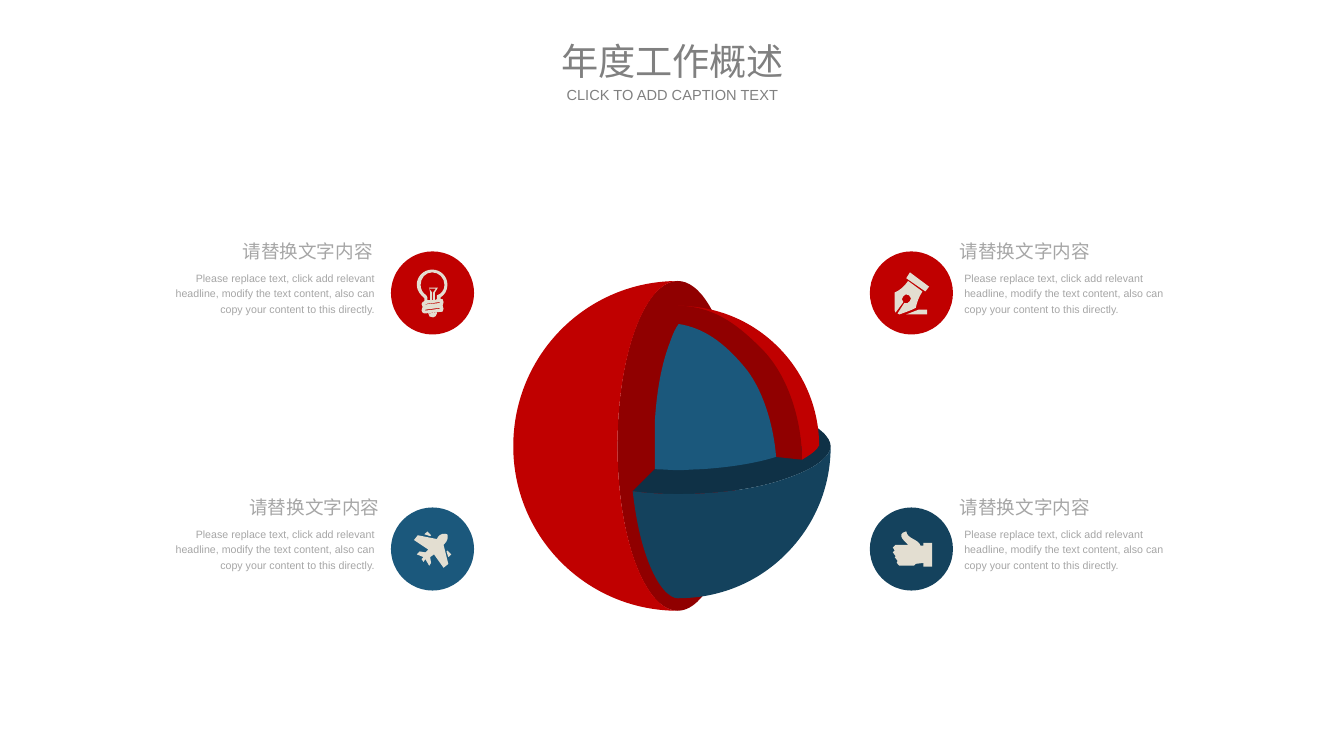
from pptx import Presentation
from pptx.dml.color import RGBColor
from pptx.enum.shapes import MSO_SHAPE as Preset
from pptx.enum.text import MSO_ANCHOR as Anchor, MSO_AUTO_SIZE as AutoSize, PP_ALIGN as Align
from pptx.oxml.ns import qn
from pptx.oxml.xmlchemy import OxmlElement
from pptx.util import Pt

COLORS = {
    "red": "C00000", "dark_red": "900000", "blue": "1B587C", "navy": "14425D",
    "dark_navy": "0F3146", "cream": "E3DED1", "title": "808080", "text": "A6A6A6",
}
FONT = "Arial"
TITLE = "年度工作概述"
CAPTION = "CLICK TO ADD CAPTION TEXT"
HEADING = "请替换文字内容"
BODY = ("Please replace text, click add relevant headline, modify the text content, "
        "also can copy your content to this directly.")

CUT_FACE = (465.1, 211.7, 90.7, 248.4)
SPHERE_PARTS = [
    ("red", [[
        (465.1, 336.2), (465.1, 267.1, 486, 211.7, 510.5, 211.7),
        (442.1, 211.7, 386.6, 267.1, 386.6, 336.2), (386.6, 404.6, 442.1, 460.1, 510.5, 460.1),
        (486, 460.1, 465.1, 404.6, 465.1, 336.2)]]),
    ("dark_navy", [[
        (595.4, 312.5), (581, 307.4, 563.8, 303.8, 545, 301.7), (476.6, 370.1),
        (487.4, 371.5, 499, 372.2, 510.5, 372.2), (542.9, 372.2, 573.1, 367.9, 595.4, 359.3),
        (617.8, 351.4, 625.7, 342, 625.7, 336.2), (625.7, 329.8, 617.8, 320.4, 595.4, 312.5)]]),
    ("navy", [[
        (625.7, 336.2), (625.7, 342, 617.8, 351.4, 595.4, 359.3),
        (573.1, 367.9, 542.9, 372.2, 510.5, 372.2), (499, 372.2, 487.4, 371.5, 476.6, 370.1),
        (478.8, 389.5, 482.4, 406.8, 487.4, 420.5), (495.4, 442.8, 504.7, 450.7, 510.5, 450.7),
        (541.4, 450.7, 570.2, 439.2, 591.8, 417.6), (614.2, 395.3, 625.7, 366.5, 625.7, 336.2)]]),
    ("red", [[
        (573.8, 265), (591.1, 287.3, 604.1, 317.5, 604.1, 346.3),
        (612.7, 341.3, 616.3, 337.7, 616.3, 336.2), (617, 336.2),
        (617, 307.4, 605.5, 280.8, 586.1, 261.4), (565.9, 241.2, 539.3, 230.4, 510.5, 230.4),
        (539.3, 230.4, 568.1, 257, 573.8, 265)]]),
    ("dark_red", [[
        (510.5, 230.4), (510.5, 336.2), (604.1, 346.3),
        (604.1, 317.5, 594, 283, 573.8, 262.8), (558, 247, 539.3, 230.4, 510.5, 230.4)]]),
    ("blue", [[
        (584.6, 344.2), (582.5, 318.2, 573.8, 291.6, 560.2, 275.8),
        (545, 257.8, 529.9, 247, 511.2, 244.1), (509, 247, 506.9, 251.3, 504.7, 257.8),
        (498.2, 274.3, 494.6, 295.2, 493.2, 318.2), (493.2, 353.5),
        (499, 353.5, 504.7, 354.2, 511.2, 354.2), (517, 354.2, 522.7, 353.5, 528.5, 353.5),
        (549.4, 352.1, 568.8, 349.2, 584.6, 344.2)]]),
]

THUMB = [[
    (27.4, 18), (18, 20.2, 28.8, 27.4, 28.8, 28.1), (19.4, 28.1), (17.3, 30.2),
    (18.7, 32.4), (17.3, 33.8), (19.4, 36.7), (18.7, 37.4), (20.9, 40.3), (20.2, 41.8),
    (22.3, 43.9), (33.1, 43.9), (34.6, 42.5), (40.3, 41.8), (40.3, 44.6), (46.8, 44.6),
    (46.8, 26.6), (40.3, 26.6), (40.3, 28.8), (38.2, 28.8), (36.7, 23.8, 28.1, 23.8, 27.4, 18)]]
PLANE = [
    [(42.5, 20.2), (43.2, 23, 42.5, 25.2, 40.3, 27.4), (39.6, 28.1), (43.2, 42.5),
     (39.6, 45.4), (32.4, 35.3), (29.5, 37.4), (30.2, 41.8), (28.8, 43.9), (25.9, 38.9),
     (24.5, 41), (23, 38.9), (24.5, 37.4), (19.4, 35.3), (21.6, 33.1), (25.9, 33.8),
     (28.1, 31.7), (17.3, 24.5), (20.2, 20.9), (34.6, 23.8), (35.3, 22.3),
     (37.4, 19.4, 40.3, 19.4, 42.5, 20.2)],
    [(45.4, 35.3), (42.5, 32.4), (41.8, 33.1), (43.2, 37.4)],
    [(27.4, 18), (25.2, 20.2), (29.5, 21.6), (30.2, 20.9)]]
PEN = [
    [(19.4, 46.1), (18.7, 44.6), (18.7, 31), (22.3, 29.5, 25.9, 26.6, 28.8, 22.3),
     (39.6, 30.2), (36.7, 34.6, 35.3, 38.9, 34.6, 42.5),
     (31, 44.6, 25.9, 46.1, 22.3, 47.5), (20.9, 46.8), (25.9, 38.9),
     (27.4, 39.6, 29.5, 38.9, 30.2, 37.4), (31.7, 36, 31, 34.6, 29.5, 33.1),
     (28.1, 31.7, 25.9, 32.4, 25.2, 33.8), (23.8, 35.3, 23.8, 36.7, 25.2, 38.2)],
    [(27.4, 47.5), (43.2, 47.5), (43.2, 43.9), (36.7, 43.9)],
    [(41.8, 30.2), (44.6, 26.6), (30.2, 15.8), (27.4, 20.2)]]
BULB = [
    [(31, 13.7), (37.4, 13.7, 42.5, 18.8, 42.5, 25.2), (42.5, 29.5, 40.3, 32.8, 37.4, 34.6),
     (37.4, 36), (38.9, 36), (39.6, 38.2), (38.9, 41), (39.6, 43.2), (38.9, 45.4),
     (25.2, 46.8), (23.8, 46.1), (23, 44.6), (23.8, 41.8), (23, 39.6), (23.8, 38.2),
     (25.2, 37.4), (25.2, 35.3), (22.3, 33, 19.4, 29.5, 19.4, 25.2),
     (19.4, 18.8, 24.6, 13.7, 31, 13.7)],
    [(28.8, 27.4), (35.3, 27.4), (33.1, 31), (33.1, 36.7), (34.6, 36), (34.6, 33.1),
     (38, 32, 40.3, 29, 40.3, 25.2), (40.3, 20, 36.2, 15.8, 31, 15.8),
     (26, 15.8, 22.3, 20, 22.3, 25.2), (22.3, 28.8, 24, 31.4, 26.6, 33.1),
     (27.4, 34.6), (27.4, 36.7), (29.5, 36.7), (29.5, 31)],
    [(33.8, 28.1), (28.8, 28.1), (31, 31), (31, 36.7), (31.7, 36.7), (31.7, 31)],
    [(34.6, 46.1), (28.1, 46.8), (28.1, 49, 29.5, 49.7, 31.7, 49.7),
     (33.1, 49.7, 34.6, 48.2, 34.6, 46.8)],
    [(36.7, 42.5), (25.9, 43.9), (25.9, 44.6), (36.7, 43.2)],
    [(36.7, 38.2), (25.9, 39.6), (25.9, 40), (36.7, 38.9)]]

BADGE_SIZE = 62.6
LEFT, RIGHT = 294.5, 655.2
TOP, BOTTOM = 189.4, 382.3
TOPICS = [
    (RIGHT, BOTTOM, "navy", THUMB, 715.7),
    (LEFT, BOTTOM, "blue", PLANE, 179.3),
    (RIGHT, TOP, "red", PEN, 715.7),
    (LEFT, TOP, "red", BULB, 174.2),
]
BODY_LEFT = {LEFT: 114.5, RIGHT: 719.3}
SIDE_ALIGN = {LEFT: Align.RIGHT, RIGHT: Align.LEFT}

prs = Presentation()
prs.slide_width, prs.slide_height = Pt(1012.3), Pt(569.5)
slide = prs.slides.add_slide(prs.slide_layouts[6])
shapes = slide.shapes


def paint(shape, color):
    shape.shadow.inherit = False
    shape.fill.solid()
    shape.fill.fore_color.rgb = RGBColor.from_string(COLORS[color])
    shape.line.fill.background()


def add_ellipse(box, color):
    paint(shapes.add_shape(Preset.OVAL, *map(Pt, box)), color)


def bend_curves(shape, contours):
    lines = iter(list(shape._element.iter(qn("a:lnTo"))))
    for contour in contours:
        for segment in contour[1:]:
            controls = [next(lines) for _ in range(len(segment) // 2)]
            if len(controls) == 3:
                curve = OxmlElement("a:cubicBezTo")
                controls[0].addprevious(curve)
                for control in controls:
                    curve.append(control[0])
                    control.getparent().remove(control)


def add_outline(contours, color, left=0, top=0):
    builder = None
    for contour in contours:
        start, *rest = [(Pt(left + segment[i]), Pt(top + segment[i + 1]))
                        for segment in contour for i in range(0, len(segment), 2)]
        if builder is None:
            builder = shapes.build_freeform(*start)
        else:
            builder.move_to(*start)
        builder.add_line_segments(rest, close=True)
    shape = builder.convert_to_shape()
    bend_curves(shape, contours)
    paint(shape, color)


def add_text(text, box, size, color, align, wrap=True, spacing=None, title=False):
    frame = shapes.add_textbox(*map(Pt, box)).text_frame
    frame.word_wrap = wrap
    frame.auto_size = AutoSize.SHAPE_TO_FIT_TEXT
    if title:
        frame.vertical_anchor = Anchor.MIDDLE
        frame.margin_left = frame.margin_right = frame.margin_top = frame.margin_bottom = 0
    paragraph = frame.paragraphs[0]
    paragraph.text = text
    paragraph.alignment = align
    paragraph.line_spacing = spacing
    font = paragraph.runs[0].font
    font.name, font.size = FONT, Pt(size)
    font.color.rgb = RGBColor.from_string(COLORS[color])


add_ellipse(CUT_FACE, "dark_red")
for part_color, part_contours in SPHERE_PARTS:
    add_outline(part_contours, part_color)

for side, row, badge_color, icon, heading_left in TOPICS:
    add_ellipse((side, row, BADGE_SIZE, BADGE_SIZE), badge_color)
    add_outline(icon, "cream", side, row)
    add_text(BODY, (BODY_LEFT[side], row + 10.1, 175, 41), 8, "text", SIDE_ALIGN[side], spacing=1.2)
    add_text(HEADING, (heading_left, row - 15.8, 113.8, 25.9), 14, "text", SIDE_ALIGN[side],
             wrap=False, spacing=1.2)

add_text(TITLE, (415.4, 28.1, 182.2, 35.3), 28, "title", Align.CENTER, title=True)
add_text(CAPTION, (415.4, 64.8, 182.2, 13.7), 11, "title", Align.CENTER, title=True)

prs.save("out.pptx")
